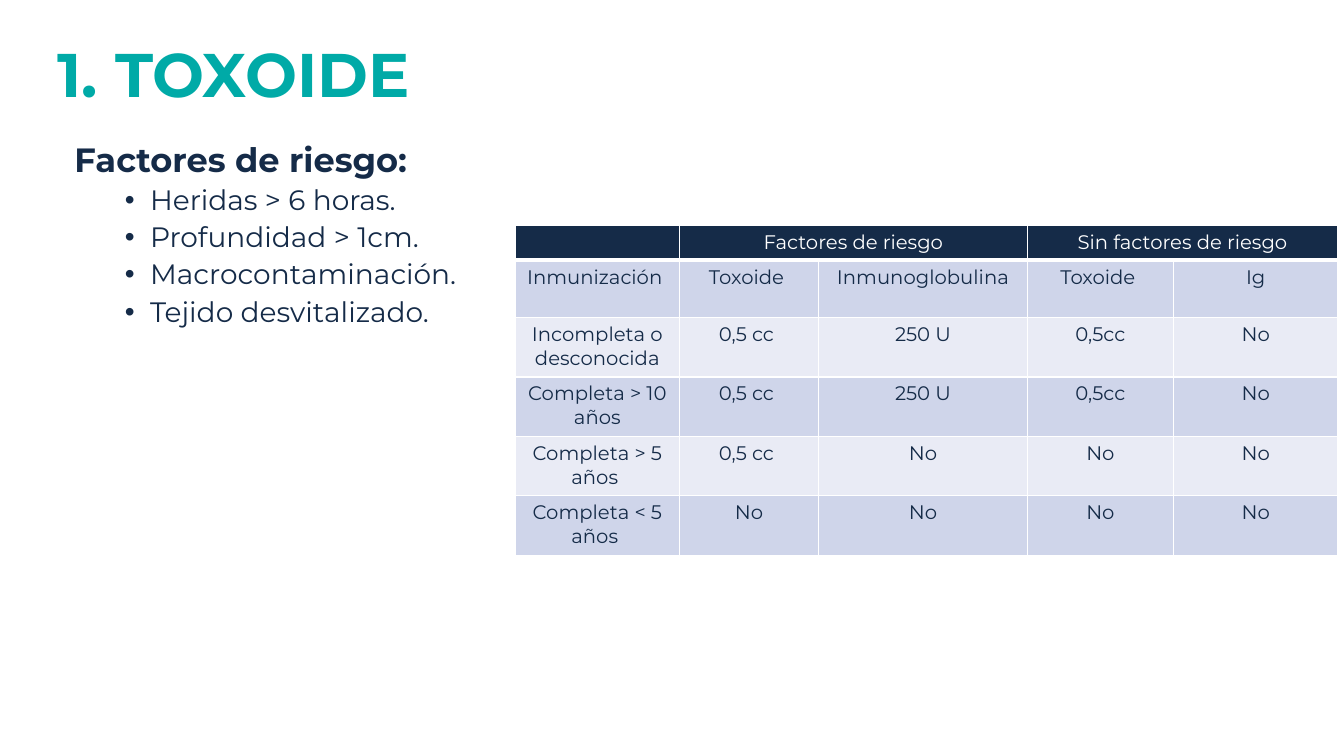
from lxml.etree import SubElement
from pptx import Presentation
from pptx.dml.color import RGBColor
from pptx.enum.text import MSO_ANCHOR, PP_ALIGN
from pptx.oxml.ns import qn
from pptx.util import Inches, Pt

TEAL = RGBColor(0x00, 0xAA, 0xA7)
NAVY = RGBColor(0x15, 0x2B, 0x48)
WHITE = RGBColor(0xFF, 0xFF, 0xFF)
BANDS = [RGBColor(0xCF, 0xD5, 0xEA), RGBColor(0xE9, 0xEB, 0xF5)]
FACE = "Montserrat"

TITLE = "1. TOXOIDE"
HEAD = "Factores de riesgo:"
RISKS = ["Heridas > 6 horas.", "Profundidad > 1cm.",
         "Macrocontaminación.", "Tejido desvitalizado."]
ROWS = [
    ["", "Factores de riesgo", "", "Sin factores de riesgo", ""],
    ["Inmunización ", "Toxoide ", "Inmunoglobulina", "Toxoide ", "Ig"],
    ["Incompleta o desconocida", "0,5 cc ", "250 U", "0,5cc", "No"],
    ["Completa > 10 años", "0,5 cc ", "250 U", "0,5cc", "No"],
    ["Completa > 5 años ", "0,5 cc ", "No", "No", "No"],
    ["Completa < 5 años ", "No", "No", "No", "No"],
]
SPANS = [1, 3]  # first column of each two-column heading
WIDTHS = [1.63, 1.38, 2.07, 1.45, 1.63]
HEIGHTS = [0.34, 0.57] + [0.59] * 4


def style(para, size, color, bold=False):
    font = para.font
    font.name, font.size, font.bold = FACE, Pt(size), bold
    font.color.rgb = color


def add_box(slide, left, top, width, height):
    frame = slide.shapes.add_textbox(
        Inches(left), Inches(top), Inches(width), Inches(height)).text_frame
    frame.word_wrap = True
    return frame


def add_bullet(para):
    props = para._p.get_or_add_pPr()
    props.set("marL", str(Inches(0.75)))
    props.set("indent", str(Inches(-0.25)))
    SubElement(props, qn("a:buFont"), typeface="Arial")
    SubElement(props, qn("a:buChar"), char="•")


def add_edges(cell, base):
    """Rule the cell in white, with its bottom edge base points wide."""
    props = cell._tc.get_or_add_tcPr()
    for side, width in zip("LRTB", (1, 1, 1, base)):
        line = SubElement(props, qn("a:ln" + side), w=str(Pt(width)))
        fill = SubElement(line, qn("a:solidFill"))
        SubElement(fill, qn("a:srgbClr"), val=str(WHITE))


def add_title(slide):
    frame = add_box(slide, 0.47, 0.04, 11.5, 1.45)
    frame.vertical_anchor = MSO_ANCHOR.MIDDLE
    para = frame.paragraphs[0]
    para.text = TITLE
    para.line_spacing = 0.9
    style(para, 44, TEAL, True)


def add_risks(slide):
    frame = add_box(slide, 0.64, 1.37, 11.5, 4.76)
    para = frame.paragraphs[0]
    para.text = HEAD
    para.line_spacing = 0.9
    style(para, 24, NAVY, True)
    for risk in RISKS:
        para = frame.add_paragraph()
        para.text = risk
        add_bullet(para)
        para.level = 1
        para.line_spacing = 0.9
        para.space_before = Pt(5)
        style(para, 20, NAVY)


def add_doses(slide):
    table = slide.shapes.add_table(
        len(ROWS), len(WIDTHS), Inches(5.11), Inches(2.24),
        Inches(sum(WIDTHS)), Inches(sum(HEIGHTS))).table
    for col, width in zip(table.columns, WIDTHS):
        col.width = Inches(width)
    for row, height in zip(table.rows, HEIGHTS):
        row.height = Inches(height)
    for start in SPANS:
        table.cell(0, start).merge(table.cell(0, start + 1))
    for r, row in enumerate(ROWS):
        top = r == 0
        for c, text in enumerate(row):
            cell = table.cell(r, c)
            add_edges(cell, 3 if top else 1)
            cell.fill.solid()
            cell.fill.fore_color.rgb = NAVY if top else BANDS[(r - 1) % 2]
            para = cell.text_frame.paragraphs[0]
            if text:
                para.text = text
            para.alignment = PP_ALIGN.CENTER
            style(para, 14, WHITE if top else NAVY)


def main():
    deck = Presentation()
    deck.slide_width, deck.slide_height = Inches(13.33), Inches(7.5)
    slide = deck.slides.add_slide(deck.slide_layouts[6])
    add_title(slide)
    add_risks(slide)
    add_doses(slide)
    deck.save("out.pptx")


if __name__ == "__main__":
    main()
